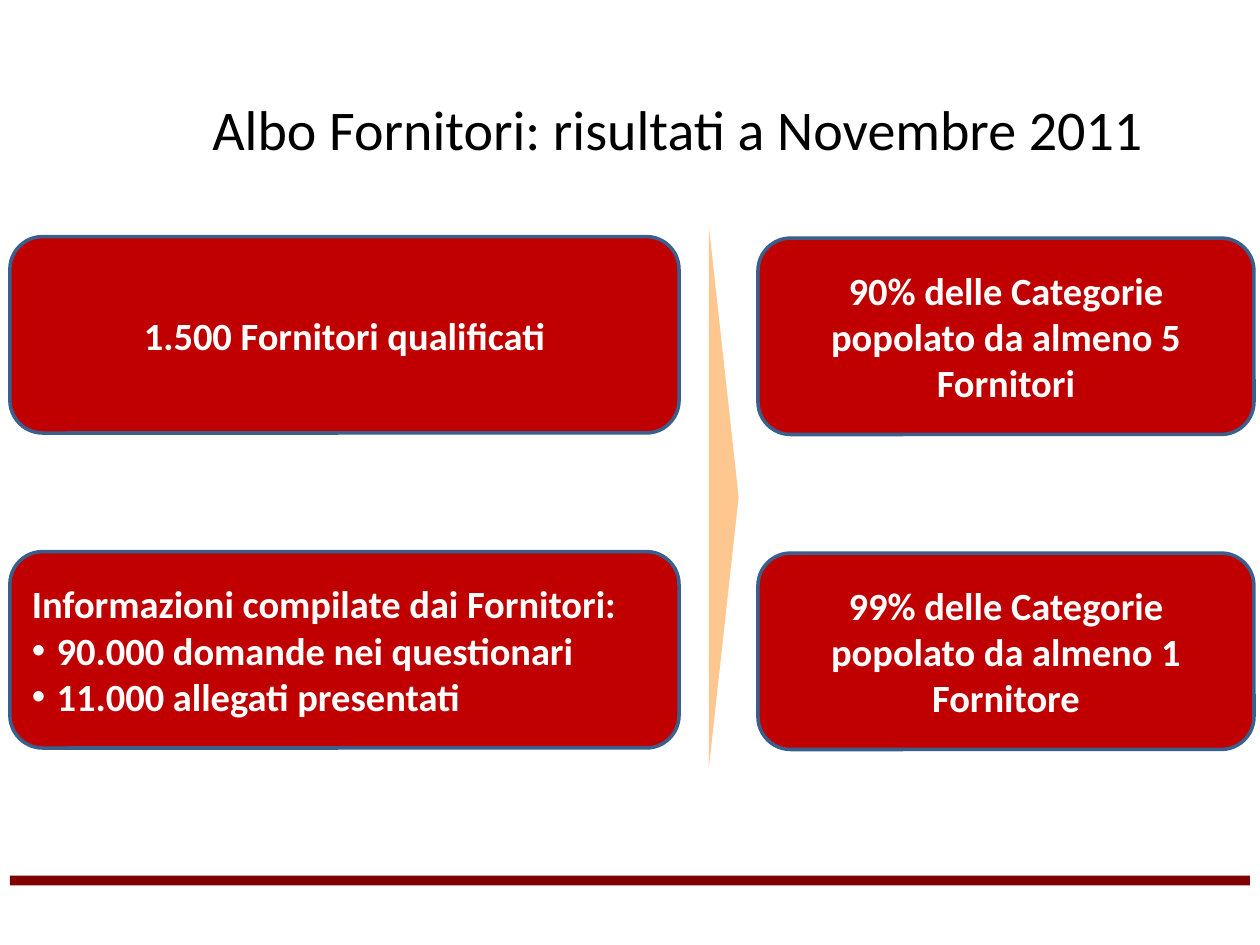
from lxml import etree
from pptx import Presentation
from pptx.dml.color import RGBColor
from pptx.enum import shapes, text
from pptx.oxml import ns
from pptx.util import Cm, Pt

FONT = "Calibri"
BLACK = RGBColor(0x00, 0x00, 0x00)
WHITE = RGBColor(0xFF, 0xFF, 0xFF)
RED = RGBColor(0xC0, 0x00, 0x00)
DARK_RED = RGBColor(0x80, 0x00, 0x00)
BLUE = RGBColor(0x3A, 0x5F, 0x8C)
PEACH = RGBColor(0xFE, 0xC7, 0x90)

CARD_HEIGHT = Cm(3.96)
CARD_PITCH = Cm(6.35)
BULLET_INDENT = Cm(0.5)

SUPPLIERS = [
    ["1.500 Fornitori qualificati"],
    [
        "Informazioni compilate dai Fornitori:",
        "90.000 domande nei questionari",
        "11.000 allegati presentati",
    ],
]
CATEGORIES = [
    ["90% delle Categorie popolato da almeno 5 Fornitori"],
    ["99% delle Categorie popolato da almeno 1 Fornitore"],
]


def add_filled_shape(slide, kind, left, top, width, height, color):
    shape = slide.shapes.add_shape(kind, left, top, width, height)
    shape.shadow.inherit = False
    shape.fill.solid()
    shape.fill.fore_color.rgb = color
    shape.line.fill.background()
    return shape


def format_paragraph(paragraph, size, color, bold, alignment):
    paragraph.alignment = alignment
    paragraph.font.name = FONT
    paragraph.font.size = Pt(size)
    paragraph.font.bold = bold
    paragraph.font.color.rgb = color


def add_bullet(paragraph):
    properties = paragraph._p.get_or_add_pPr()
    properties.set("marL", str(BULLET_INDENT))
    properties.set("indent", str(-BULLET_INDENT))
    font = etree.SubElement(properties, ns.qn("a:buFont"))
    font.set("typeface", "Arial")
    etree.SubElement(properties, ns.qn("a:buChar")).set("char", "•")


def add_title(slide, left, top, width, height):
    frame = slide.shapes.add_textbox(left, top, width, height).text_frame
    frame.word_wrap = True
    frame.vertical_anchor = text.MSO_ANCHOR.MIDDLE
    frame.margin_left = Cm(1.5)
    frame.text = "Albo Fornitori: risultati a Novembre 2011"
    format_paragraph(frame.paragraphs[0], 32, BLACK, False, text.PP_ALIGN.CENTER)


def add_card(slide, left, top, width, height, lines):
    card = add_filled_shape(
        slide, shapes.MSO_SHAPE.ROUNDED_RECTANGLE, left, top, width, height, RED
    )
    card.line.color.rgb = BLUE
    card.line.width = Pt(2)
    frame = card.text_frame
    frame.word_wrap = True
    frame.vertical_anchor = text.MSO_ANCHOR.MIDDLE
    frame.text = "\n".join(lines)
    alignment = text.PP_ALIGN.LEFT if len(lines) > 1 else text.PP_ALIGN.CENTER
    for index, paragraph in enumerate(frame.paragraphs):
        if index:
            add_bullet(paragraph)
        format_paragraph(paragraph, 22, WHITE, True, alignment)


def add_card_column(slide, left, top, width, cards):
    for row, lines in enumerate(cards):
        add_card(slide, left, top + row * CARD_PITCH, width, CARD_HEIGHT, lines)


def add_pointer(slide, left, top, width, height):
    pointer = add_filled_shape(
        slide,
        shapes.MSO_SHAPE.UP_ARROW,
        left + (width - height) // 2,
        top + (height - width) // 2,
        height,
        width,
        PEACH,
    )
    pointer.rotation = 90
    pointer.adjustments[0] = 1
    pointer.adjustments[1] = 1


def main():
    presentation = Presentation()
    presentation.slide_width = Cm(25.4)
    presentation.slide_height = Cm(19.05)
    slide = presentation.slides.add_slide(presentation.slide_layouts[6])

    add_filled_shape(
        slide, shapes.MSO_SHAPE.RECTANGLE,
        Cm(0.2), Cm(17.65), Cm(25), Cm(0.2), DARK_RED,
    )
    add_pointer(slide, Cm(14.29), Cm(4.56), Cm(0.6), Cm(10.92))
    add_title(slide, Cm(1.27), Cm(1), Cm(23.55), Cm(3.18))
    add_card_column(slide, Cm(0.2), Cm(4.77), Cm(13.49), SUPPLIERS)
    add_card_column(slide, Cm(15.28), Cm(4.8), Cm(10), CATEGORIES)

    presentation.save("out.pptx")


if __name__ == "__main__":
    main()
